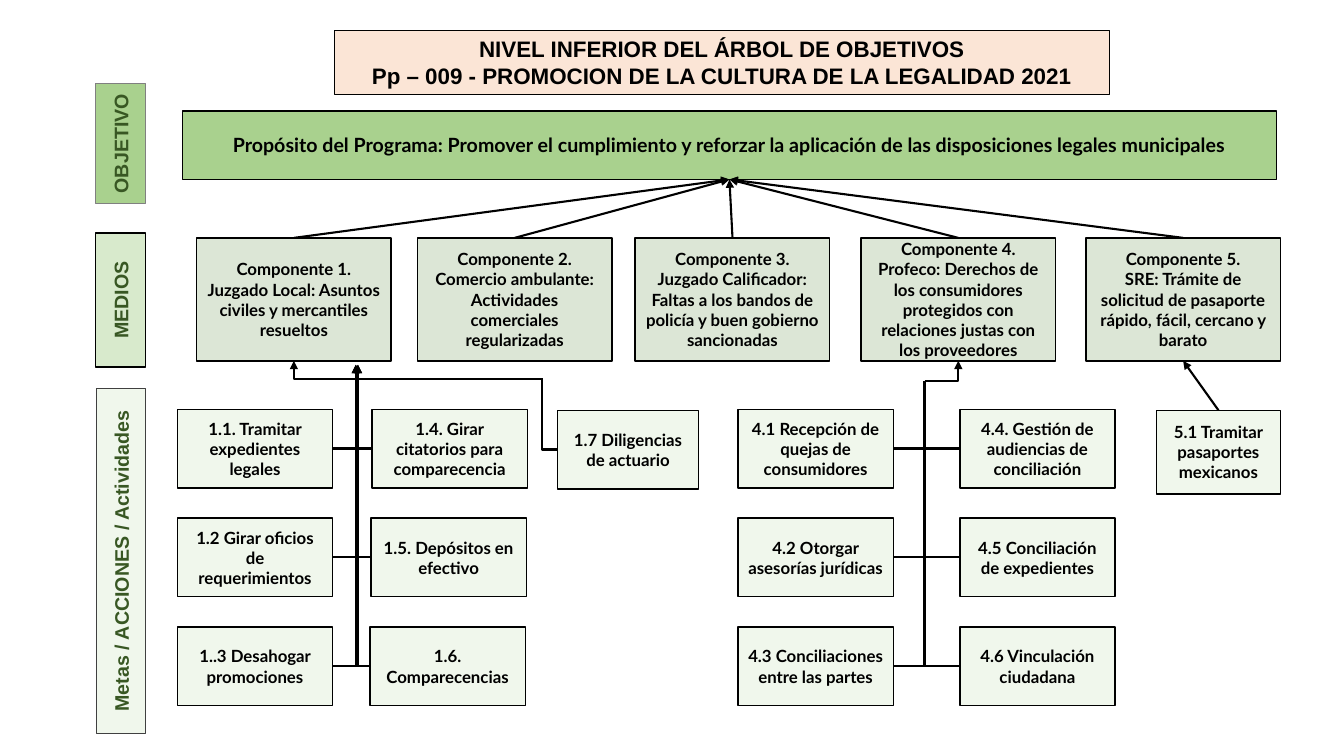
from dataclasses import dataclass

from lxml import etree
from pptx import Presentation, util as u
from pptx.dml.color import RGBColor
from pptx.enum import shapes, text
from pptx.oxml import ns

PX = 9144
TOP, LEFT, BOTTOM, RIGHT = range(4)


@dataclass(frozen=True)
class Theme:
    black: str = "000000"
    label_text: str = "385723"
    title_fill: str = "FBE5D6"
    goal_fill: str = "A9D18E"
    component_fill: str = "548235"
    activity_fill: str = "C5E0B4"
    gray: str = "808080"
    dark_gray: str = "404040"
    heading_font: str = "Arial"
    body_font: str = "Lato"
    title_size: int = 16
    label_size: int = 14
    body_size: int = 12


class TreeSlide:
    def __init__(self, deck, theme):
        self.theme = theme
        self.page = deck.slides.add_slide(deck.slide_layouts[5])

    def paint(self, shape, fill, border, width=1, alpha=100):
        shape.fill.solid()
        shape.fill.fore_color.rgb = RGBColor.from_string(fill)
        if alpha < 100:
            color = shape._element.spPr.find(ns.qn("a:solidFill")).find(ns.qn("a:srgbClr"))
            etree.SubElement(color, ns.qn("a:alpha"), val=str(alpha * 1000))
        shape.line.color.rgb = RGBColor.from_string(border)
        shape.line.width = u.Pt(width)

    def fill_text(self, shape, paragraphs, font, size, color, anchor=text.MSO_ANCHOR.MIDDLE):
        frame = shape.text_frame
        frame.word_wrap = True
        frame.auto_size = text.MSO_AUTO_SIZE.NONE
        frame.vertical_anchor = anchor
        for index, lines in enumerate(paragraphs):
            para = frame.add_paragraph() if index else frame.paragraphs[0]
            para.alignment = text.PP_ALIGN.CENTER
            para.space_before = u.Pt(0)
            for number, line in enumerate(lines.split("\n")):
                if number:
                    para.add_line_break()
                span = para.add_run()
                span.text = line
                span.font.name = font
                span.font.size = u.Pt(size)
                span.font.bold = True
                span.font.color.rgb = RGBColor.from_string(color)

    def title(self, area, lines):
        box = self.page.shapes.title
        box.left, box.top, box.width, box.height = (n * PX for n in area)
        self.paint(box, self.theme.title_fill, self.theme.black, 0.75)
        self.fill_text(box, lines, self.theme.heading_font, self.theme.title_size,
                       self.theme.black, text.MSO_ANCHOR.TOP)

    def box(self, area, paragraphs, fill, alpha=100, size=None):
        box = self.process(area)
        self.paint(box, fill, self.theme.black, alpha=alpha)
        self.fill_text(box, paragraphs, self.theme.body_font,
                       size or self.theme.body_size, self.theme.black)
        return box

    def process(self, area):
        box = self.page.shapes.add_shape(
            shapes.MSO_SHAPE.FLOWCHART_PROCESS, *(n * PX for n in area))
        box.shadow.inherit = False
        return box

    def side_label(self, area, caption, fill, alpha, border):
        box = self.process(area)
        box.rotation = 270
        self.paint(box, fill, border, alpha=alpha)
        self.fill_text(box, [caption], self.theme.heading_font,
                       self.theme.label_size, self.theme.label_text)

    def activity(self, area, caption):
        return self.box(area, [caption], self.theme.activity_fill, 25)

    def link(self, start, end, arrow=True, bent=False):
        points = [n * PX if isinstance(n, int) else 0 for n in start + end]
        kind = shapes.MSO_CONNECTOR.ELBOW if bent else shapes.MSO_CONNECTOR.STRAIGHT
        line = self.page.shapes.add_connector(kind, *points)
        if not isinstance(start[0], int):
            line.begin_connect(*start)
        if not isinstance(end[0], int):
            line.end_connect(*end)
        line.line.color.rgb = RGBColor.from_string(self.theme.black)
        line.line.width = u.Pt(1.5)
        properties = line._element.spPr
        if bent:
            properties.find(ns.qn("a:prstGeom")).set("prst", "bentConnector2")
        if arrow:
            etree.SubElement(properties.find(ns.qn("a:ln")),
                             ns.qn("a:tailEnd"), type="triangle")
        etree.SubElement(properties, ns.qn("a:effectLst"))


SIDE_LABELS = [
    ((60, 118, 119, 49), "OBJETIVO", Theme.goal_fill, 100, Theme.gray),
    ((53, 273, 133, 49), "MEDIOS", Theme.goal_fill, 45, Theme.black),
    ((-51, 532, 342, 49), "Metas / ACCIONES / Actividades",
     Theme.activity_fill, 25, Theme.dark_gray),
]
COMPONENTS = [
    (195, ["Componente 1.\nJuzgado Local: Asuntos civiles y mercantiles resueltos"]),
    (414, ["Componente 2.\nComercio ambulante: Actividades comerciales regularizadas"]),
    (630, ["Componente 3.\nJuzgado Calificador: Faltas a los bandos de policía "
           "y buen gobierno sancionadas"]),
    (854, ["Componente 4.\nProfeco: Derechos de los consumidores protegidos con "
           "relaciones justas con los proveedores"]),
    (1077, ["Componente 5.", "SRE: Trámite de solicitud de pasaporte rápido, fácil, "
            "cercano y barato"]),
]
ACTIVITY_COLUMNS = [
    (176, 0, RIGHT, (355, 362), True,
     ["1.1. Tramitar expedientes legales", "1.2 Girar oficios de requerimientos",
      "1..3 Desahogar promociones"]),
    (369, -1, LEFT, (353, 362), True,
     ["1.4. Girar citatorios para comparecencia", "1.5. Depósitos en efectivo",
      "1.6. Comparecencias"]),
    (732, 0, RIGHT, (917, 378), False,
     ["4.1 Recepción de quejas de consumidores", "4.2 Otorgar asesorías jurídicas",
      "4.3 Conciliaciones entre las partes"]),
    (952, 0, LEFT, (917, 378), False,
     ["4.4. Gestión de audiencias de conciliación", "4.5 Conciliación de expedientes",
      "4.6 Vinculación ciudadana"]),
]


def main():
    deck = Presentation()
    deck.slide_width = u.Inches(13.33)
    deck.slide_height = u.Inches(7.5)
    theme = Theme()
    tree = TreeSlide(deck, theme)

    tree.title((332, 30, 768, 64), [
        "NIVEL INFERIOR DEL ÁRBOL DE OBJETIVOS",
        "Pp – 009 - PROMOCION DE LA CULTURA DE LA LEGALIDAD 2021"])
    for label in SIDE_LABELS:
        tree.side_label(*label)

    purpose = tree.box((181, 110, 1085, 68), [
        "Propósito del Programa: Promover el cumplimiento y reforzar la aplicación "
        "de las disposiciones legales municipales"], theme.goal_fill, size=theme.label_size)
    components = []
    for left, paragraphs in COMPONENTS:
        component = tree.box((left, 236, 193, 122), paragraphs, theme.component_fill, 20)
        tree.link((component, TOP), (purpose, BOTTOM))
        components.append(component)

    for left, shift, side, trunk, arrow, captions in ACTIVITY_COLUMNS:
        for row, caption in enumerate(captions):
            activity = tree.activity((left + shift * row, 406 + 108 * row, 154, 78), caption)
            tree.link((activity, side), trunk, arrow, bent=True)
    tree.link((917, 378), (components[3], BOTTOM), bent=True)

    proceedings = tree.activity((553, 407, 140, 78), "1.7 Diligencias de actuario")
    tree.link((proceedings, LEFT), (538, 375), arrow=False, bent=True)
    tree.link((538, 376), (components[0], BOTTOM), bent=True)

    passports = tree.activity((1147, 407, 123, 83), "5.1 Tramitar pasaportes mexicanos")
    tree.link((passports, TOP), (components[4], BOTTOM))

    deck.save("out.pptx")


if __name__ == "__main__":
    main()
